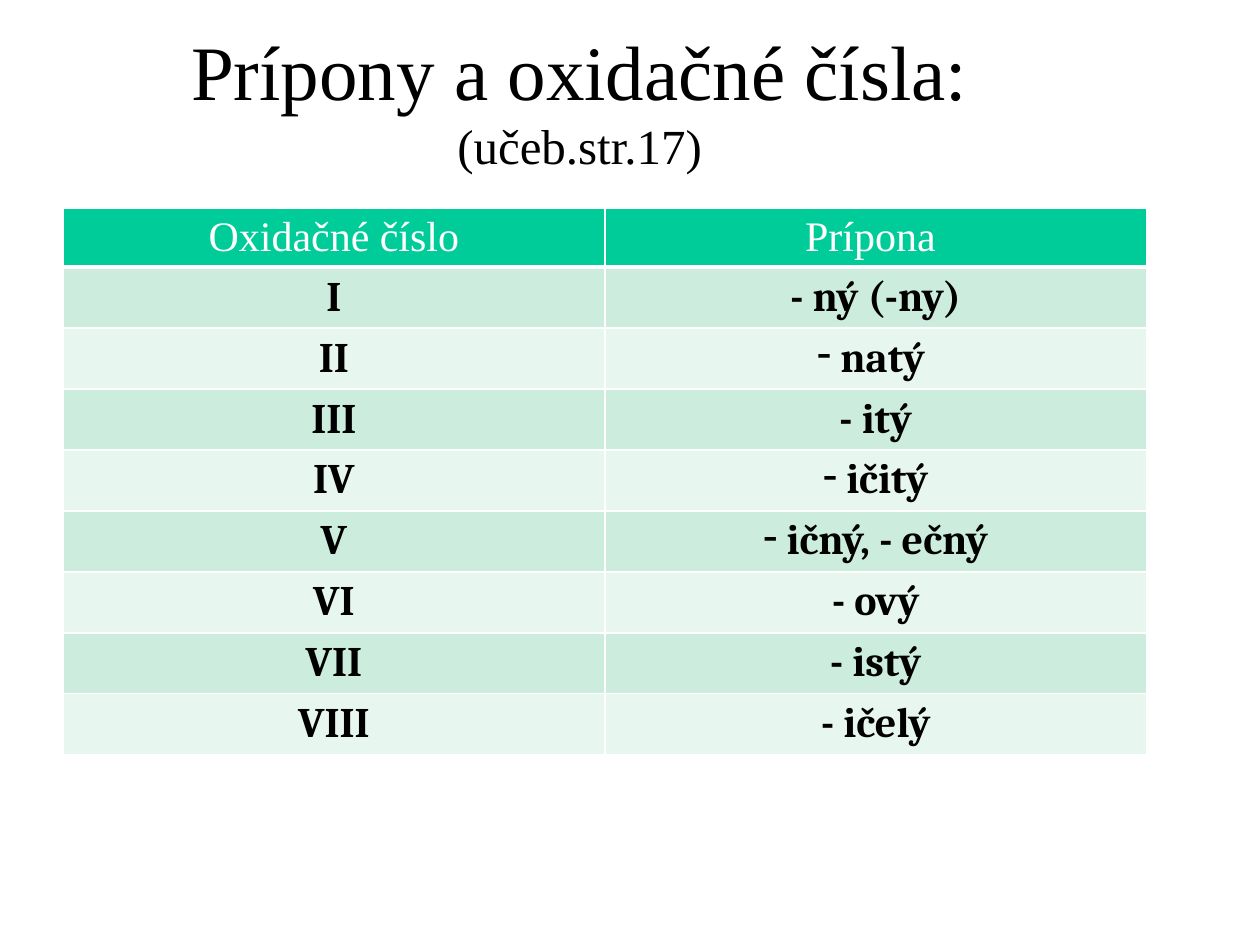
from lxml import etree
from pptx import Presentation, util as u
from pptx.dml.color import RGBColor
from pptx.enum import text
from pptx.oxml.ns import qn

HEADINGS = ("Oxidačné číslo", "Prípona ")
SUFFIXES = (
    ("I", "- ný (-ny)"),
    ("II", "• natý "),
    ("III", "- itý"),
    ("IV", "• ičitý"),
    ("V", "• ičný, - ečný"),
    ("VI", "- ový"),
    ("VII", "- istý"),
    ("VIII", "- ičelý"),
)


def colour(value):
    """Turn a hex string into a colour."""
    return RGBColor.from_string(value)


class SuffixSlide:
    """Hold the style and the current slide."""

    header_fill = "00CC99"
    bands = ("CCECDE", "E7F6EF")
    border = "FFFFFF"
    title_font = {"name": "Times New Roman", "bold": False}
    header_font = {"name": "Times New Roman", "size": u.Pt(24), "bold": False}
    body_font = {"name": "Cambria", "size": u.Pt(24), "bold": True}

    def __init__(self, deck):
        """Add a slide with only a title."""
        self.width, self.height = deck.slide_width, deck.slide_height
        self.page = deck.slides.add_slide(deck.slide_layouts[5])

    def share(self, left, top, width, height):
        """Turn shares of the slide into lengths."""
        sizes = (self.width, self.height) * 2
        return [round(part * size) for part, size in zip((left, top, width, height), sizes)]

    def format(self, font, style, ink):
        """Apply a dict of format values and a colour to a font."""
        for name, value in style.items():
            setattr(font, name, value)
        font.color.rgb = colour(ink)

    def title(self, place, spans):
        """Place the title and fill it with sized spans."""
        box = self.page.shapes.title
        box.left, box.top, box.width, box.height = self.share(*place)
        frame = box.text_frame
        frame.word_wrap = True
        frame.auto_size = text.MSO_AUTO_SIZE.NONE
        frame.vertical_anchor = text.MSO_ANCHOR.MIDDLE
        para = frame.paragraphs[0]
        para.alignment = text.PP_ALIGN.CENTER
        for words, size in spans:
            span = para.add_run()
            span.text = words
            self.format(span.font, {**self.title_font, "size": u.Pt(size)}, "000000")

    def dash(self, para):
        """Give a paragraph a dash as its bullet."""
        props = para._p.get_or_add_pPr()
        props.set("marL", "0")
        props.set("indent", "0")
        etree.SubElement(props, qn("a:buFontTx"))
        etree.SubElement(props, qn("a:buChar"), char="-")

    def borders(self, cell, bottom):
        """Draw the four borders of a cell before its fill is set."""
        props = cell._tc.get_or_add_tcPr()
        for side, points in (("L", 1), ("R", 1), ("T", 1), ("B", bottom)):
            line = etree.SubElement(props, qn(f"a:ln{side}"), w=str(u.Pt(points)))
            fill = etree.SubElement(line, qn("a:solidFill"))
            etree.SubElement(fill, qn("a:srgbClr"), val=self.border)

    def cell(self, cell, words, fill, style, ink, bottom=1):
        """Fill one cell with centred text, a bullet mark becoming a dash."""
        self.borders(cell, bottom)
        cell.fill.solid()
        cell.fill.fore_color.rgb = colour(fill)
        para = cell.text_frame.paragraphs[0]
        para.alignment = text.PP_ALIGN.CENTER
        if words.startswith("•"):
            self.dash(para)
        span = para.add_run()
        span.text = words.removeprefix("•")
        self.format(span.font, style, ink)

    def table(self, place, headings, rows):
        """Draw a banded table under a header row."""
        box = self.page.shapes.add_table(len(rows) + 1, len(headings), *self.share(*place))
        grid = box.table
        for column, words in enumerate(headings):
            self.cell(grid.cell(0, column), words, self.header_fill,
                      self.header_font, "FFFFFF", bottom=3)
        for index, row in enumerate(rows):
            for column, words in enumerate(row):
                self.cell(grid.cell(index + 1, column), words, self.bands[index % 2],
                          self.body_font, "000000")


def main():
    """Build the deck and save it."""
    deck = Presentation()
    deck.slide_width, deck.slide_height = u.Inches(10), u.Inches(7.5)
    slide = SuffixSlide(deck)
    slide.title((0.05, 0.04, 0.82, 0.13),
                (("Prípony a oxidačné čísla: ", 44), ("(učeb.str.17)", 28)))
    slide.table((0.05, 0.22, 0.86, 0.49), HEADINGS, SUFFIXES)
    deck.save("out.pptx")


if __name__ == "__main__":
    main()
